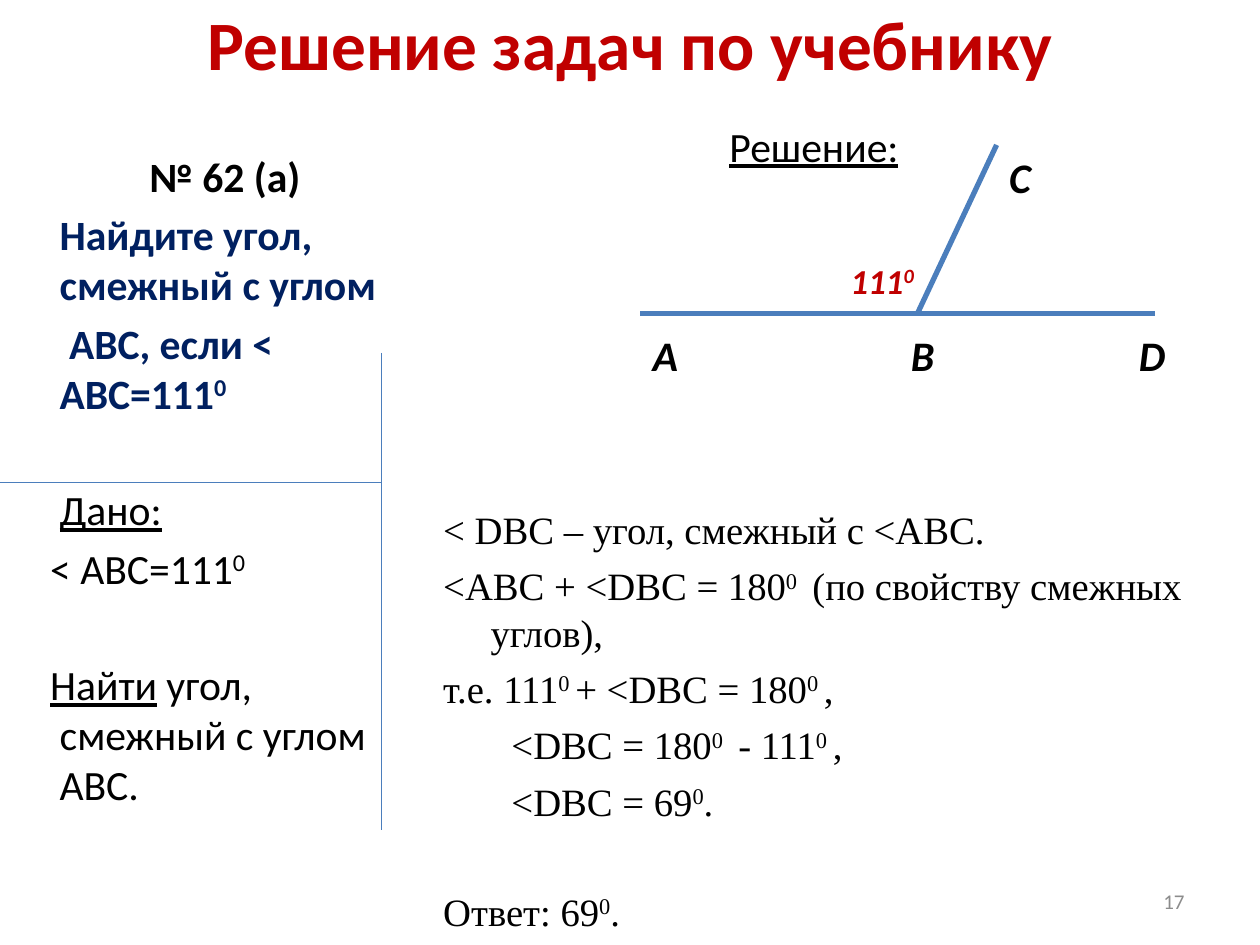
from dataclasses import dataclass

import pptx
import pptx.dml.color
import pptx.enum.shapes
import pptx.enum.text
import pptx.oxml
import pptx.oxml.ns
import pptx.util

Pt = pptx.util.Pt
Align = pptx.enum.text.PP_ALIGN
Anchor = pptx.enum.text.MSO_ANCHOR


@dataclass(frozen=True)
class Theme:
    body_font: str = "Calibri"
    proof_font: str = "Times New Roman"
    red: str = "C00000"
    navy: str = "002060"
    black: str = "000000"
    gray: str = "8C8C8C"
    blue: str = "4B7EBC"
    title: float = 39.6
    body: float = 23.8
    proof: float = 22.1
    point: float = 24
    angle: float = 20
    number: float = 12


THEME = Theme()


@dataclass(frozen=True)
class Style:
    size: float
    color: str = THEME.black
    font: str = THEME.body_font
    bold: bool = False
    italic: bool = False


@dataclass(frozen=True)
class Run:
    text: str
    underline: bool = False
    raised: bool = False


@dataclass(frozen=True)
class Line:
    runs: tuple[Run, ...]
    style: Style
    align: Align = Align.LEFT
    before: float = 0
    margin: float = 0
    indent: float = 0


@dataclass(frozen=True)
class Box:
    left: float
    top: float
    width: float
    height: float


@dataclass(frozen=True)
class Segment:
    start: tuple[float, float]
    end: tuple[float, float]
    weight: float


def add_line(paragraph, line: Line) -> None:
    paragraph.alignment = line.align
    paragraph.space_before = Pt(line.before)
    properties = paragraph._p.get_or_add_pPr()
    properties.set("marL", str(int(Pt(line.margin))))
    properties.set("indent", str(int(Pt(line.indent))))
    for part in line.runs:
        run = paragraph.add_run()
        run.text = part.text
        font = run.font
        font.name, font.size = line.style.font, Pt(line.style.size)
        font.bold, font.italic = line.style.bold, line.style.italic
        font.underline = part.underline
        font.color.rgb = pptx.dml.color.RGBColor.from_string(line.style.color)
        if part.raised:
            run._r.get_or_add_rPr().set("baseline", "30000")


def add_text(slide, box: Box, lines: list[Line], anchor: Anchor = Anchor.TOP,
             wrap: bool = True) -> None:
    frame = slide.shapes.add_textbox(
        Pt(box.left), Pt(box.top), Pt(box.width), Pt(box.height)).text_frame
    frame.word_wrap = wrap
    frame.vertical_anchor = anchor
    for index, line in enumerate(lines):
        add_line(frame.add_paragraph() if index else frame.paragraphs[0], line)


def add_segment(slide, segment: Segment) -> None:
    connector = slide.shapes.add_connector(
        pptx.enum.shapes.MSO_CONNECTOR.STRAIGHT,
        *map(Pt, segment.start + segment.end))
    connector.line.color.rgb = pptx.dml.color.RGBColor.from_string(THEME.blue)
    connector.line.width = Pt(segment.weight)
    connector._element.spPr.append(
        pptx.oxml.parse_xml(f"<a:effectLst {pptx.oxml.ns.nsdecls('a')}/>"))


def main() -> None:
    presentation = pptx.Presentation()
    presentation.slide_width, presentation.slide_height = Pt(720), Pt(540)
    slide = presentation.slides.add_slide(presentation.slide_layouts[6])
    degree = Run("0", raised=True)

    # Title
    title = Style(THEME.title, THEME.red, bold=True)
    add_text(slide, Box(36, 0, 648, 49),
             [Line((Run("Решение задач по учебнику"),), title, Align.CENTER)],
             Anchor.MIDDLE)

    # Problem statement, what is given and what to find
    heading = Style(THEME.body, bold=True)
    task = Style(THEME.body, THEME.navy, bold=True)
    plain = Style(THEME.body)
    step, gap = 4.8, 38
    add_text(slide, Box(0, 82.6, 240, 400), [
        Line((Run("№ 62 (а)"),), heading, Align.CENTER, margin=17),
        Line((Run("Найдите угол, смежный с углом"),), task, before=step, margin=27),
        Line((Run("АВС, если < АВС=111"), degree), task, before=step,
             margin=27, indent=5.4),
        Line((Run("Дано:", underline=True),), plain, before=gap, margin=27),
        Line((Run("< АВС=111"), degree), plain, before=step,
             margin=27, indent=-5.4),
        Line((Run("Найти", underline=True), Run(" угол, смежный с углом АВС.")),
             plain, before=gap, margin=27, indent=-5.4),
    ])

    # Solution
    proof = Style(THEME.proof, font=THEME.proof_font)
    step, gap = 5.6, 36.6
    hanging = dict(style=proof, margin=27, indent=-27)
    equation = dict(style=proof, margin=39, before=step)
    raised = Run("0 ", raised=True)
    add_text(slide, Box(246.2, 65.5, 437.8, 416), [
        Line((Run("Решение:", underline=True),), plain, Align.CENTER),
        Line((Run("< DВС – угол, смежный с <АВС."),), before=191.5, **hanging),
        Line((Run("<АВС + <DВС = 180"), raised,
              Run(" (по свойству смежных углов),")), before=step, **hanging),
        Line((Run("т.е. 111"), raised, Run("+ <DВС = 180"), raised, Run(",")),
             before=step, **hanging),
        Line((Run("<DВС = 180"), raised, Run(" - 111"), raised, Run(",")),
             **equation),
        Line((Run("<DВС = 69"), degree, Run(".")), **equation),
        Line((Run("Ответ: 69"), degree, Run(".")), before=gap, **hanging),
    ])

    # Page number
    add_text(slide, Box(516.2, 500.4, 167.8, 28.8),
             [Line((Run("17"),), Style(THEME.number, THEME.gray), Align.RIGHT)],
             Anchor.MIDDLE)

    # Adjacent angles: rays from vertex B, then the dividing rules
    vertex = (524.2, 179.3)
    corner = (218.2, 275.8)
    for segment in (
        Segment(vertex, (365.8, vertex[1]), 3),
        Segment(vertex, (660.2, vertex[1]), 3),
        Segment(vertex, (569.5, 82.8), 3),
        Segment((corner[0], 201.6), (corner[0], 474.5), 0.75),
        Segment((0, corner[1]), corner, 0.75),
    ):
        add_segment(slide, segment)

    # Point names and the angle value
    point = Style(THEME.point, bold=True, italic=True)
    for name, left, top in (("А", 365.8, 185), ("В", 513.4, 185),
                            ("D", 643.7, 185), ("С", 569.5, 82.8)):
        add_text(slide, Box(left, top, 29, 36), [Line((Run(name),), point)],
                 wrap=False)
    angle = Style(THEME.angle, THEME.red, bold=True, italic=True)
    add_text(slide, Box(478.8, 144.7, 51.8, 31.7),
             [Line((Run("111"), degree), angle)], wrap=False)

    presentation.save("out.pptx")


if __name__ == "__main__":
    main()
